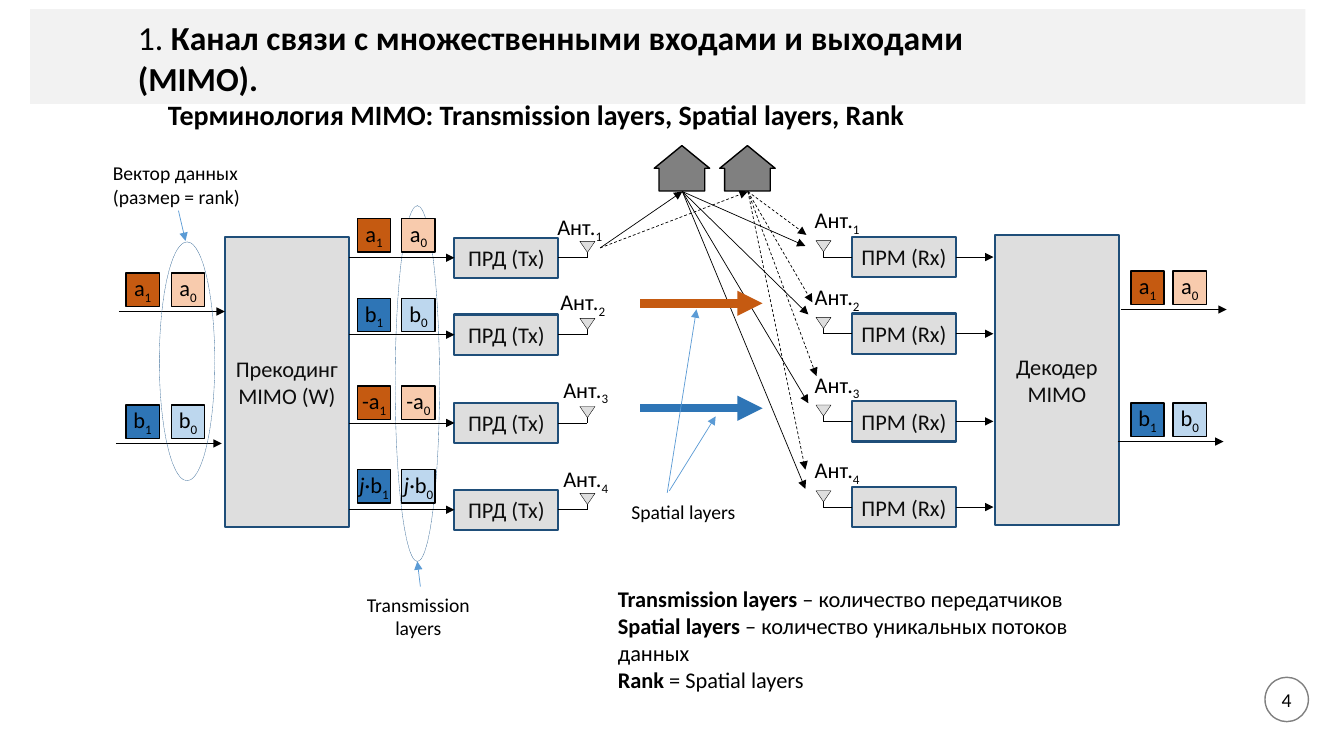
from lxml.etree import SubElement as Sub
from pptx import Presentation
from pptx.dml.color import RGBColor as RGB
from pptx.enum.dml import MSO_LINE as DASH
from pptx.enum.shapes import MSO_CONNECTOR as CON, MSO_SHAPE as GEO
from pptx.enum.text import MSO_ANCHOR as ANC, PP_ALIGN as AL
from pptx.oxml.ns import qn
from pptx.util import Pt

BLACK, INK, WHITE = RGB(0, 0, 0), RGB(13, 13, 13), RGB(255, 255, 255)
BAND, PALE, GREY = RGB(242, 242, 242), RGB(222, 222, 222), RGB(128, 128, 128)
NAVY, RING, SKY = RGB(31, 78, 121), RGB(67, 115, 158), RGB(91, 155, 213)
RUST, PEACH = RGB(197, 90, 17), RGB(248, 203, 173)
BLUE, ICE = RGB(46, 117, 182), RGB(189, 215, 238)
WARM, COOL = (RUST, PEACH), (BLUE, ICE)
CHIP, BOX = 23.8, (74.2, 28.8)


def write(frame, paras, size=16, ink=BLACK, align=AL.LEFT, side=7.2, wrap=True):
    """Fill a frame with paragraphs of (text, style) runs; styles are b, i and s."""
    frame.word_wrap = wrap
    frame.margin_left = frame.margin_right = Pt(side)
    for k, runs in enumerate(paras):
        para = frame.add_paragraph() if k else frame.paragraphs[0]
        para.alignment = align
        for text, style in runs:
            run = para.add_run()
            run.text = text
            font = run.font
            font.name, font.size, font.color.rgb = "Calibri", Pt(size), ink
            font.bold, font.italic = "b" in style, "i" in style
            if "s" in style:
                run._r.get_or_add_rPr().set("baseline", "-25000")


def label(slide, box, paras, **look):
    """Add a text box."""
    area = slide.shapes.add_textbox(*map(Pt, box))
    write(area.text_frame, paras, **look)
    return area


def shape(slide, kind, box, fill=None, line=None, width=1, dash=None):
    """Add a flat preset shape."""
    part = slide.shapes.add_shape(kind, *map(Pt, box))
    part.shadow.inherit = False
    if fill is None:
        part.fill.background()
    else:
        part.fill.solid()
        part.fill.fore_color.rgb = fill
    if line is None:
        part.line.fill.background()
    else:
        part.line.color.rgb, part.line.width = line, Pt(width)
        part.line.dash_style = dash
    return part


def block(slide, box, text, side=7.2):
    """Add a grey block with centred text."""
    part = shape(slide, GEO.RECTANGLE, box, PALE, NAVY, 1.5)
    part.text_frame.vertical_anchor = ANC.MIDDLE
    write(part.text_frame, [[(text, "")]], ink=INK, align=AL.CENTER, side=side)
    return part


def link(slide, start, end, color=BLACK, width=0.5, dash=None, tip=True):
    """Add a straight line, with an arrowhead at its end if asked."""
    wire = slide.shapes.add_connector(CON.STRAIGHT, *map(Pt, (*start, *end)))
    wire.line.color.rgb, wire.line.width = color, Pt(width)
    wire.line.dash_style = dash
    if tip:
        Sub(wire.line._get_or_add_ln(), qn("a:tailEnd"), type="triangle")
    Sub(wire._element.spPr, qn("a:effectLst"))
    return wire


def chips(slide, x, y, gap, tones, first, last):
    """Add two symbol chips, with subscripts 1 and 0."""
    for k, (tone, runs) in enumerate(zip(tones, (first, last))):
        chip = shape(slide, GEO.RECTANGLE, (x + k * gap, y, CHIP, CHIP), tone, BLACK)
        chip.text_frame.vertical_anchor = ANC.MIDDLE
        write(chip.text_frame, [runs + [(str(1 - k), "s")]], align=AL.CENTER, side=0)


def streams(slide, x, y, shift, gap):
    """Add the two data streams a and b, each with its arrow."""
    for name, tones, top, dx in (("a", WARM, 53.3, 0), ("b", COOL, 147.6, -2.2)):
        link(slide, (x + dx, y + top), (x + dx + 75.6, y + top))
        chips(slide, x + shift, y + top - 27.4, gap, tones, [(name, "")], [(name, "")])


def mast(slide, part, site, x, y, spot, num):
    """Add an antenna joined to a side of a block, with its numbered label."""
    edge = (part.left + (part.width if site == 3 else 0)) / Pt(1)
    wire = link(slide, (edge, y), (x, y), tip=False)
    wire.begin_connect(part, site)
    link(slide, (x, y - 4.5), (x, y), tip=False)
    cone = shape(slide, GEO.ISOSCELES_TRIANGLE, (x - 5.4, y - 11.7, 10.8, 7.9), PALE, BLACK, 0.25)
    cone.rotation = 180
    label(slide, (*spot, 47.5, 26.6), [[("Ант.", ""), (str(num), "s")]], wrap=False)


def head(slide, box):
    """Draw the title band with the title and subtitle."""
    x, y, w, h = box
    shape(slide, GEO.RECTANGLE, box, BAND)
    area = label(slide, (x + 69.8, y + 2.2, 661.7, 65.5),
                 [[("1. ", ""), ("Канал связи с множественными входами и выходами (MIMO).", "b")],
                  [("Терминология MIMO: Transmission layers, Spatial layers, Rank", "b")]], size=24)
    para = area.text_frame.paragraphs[1]
    para.runs[0].font.size = Pt(20)
    para._p.get_or_add_pPr().set("marL", str(Pt(21.5)))


def sender(slide, box):
    """Draw the precoder, its data vector and the transmitters."""
    x, y, w, h = box
    shape(slide, GEO.OVAL, (x + 121.7, y - 22.3, 31.7, 254.2), None, RING, 0.25, DASH.SQUARE_DOT)
    block(slide, box, "Прекодинг MIMO (W)")
    streams(slide, x - 75.6, y, 5, 32.4)
    shape(slide, GEO.OVAL, (x - 46.8, y + 3.6, 39.6, 170.6), None, RING, 0.25, DASH.SQUARE_DOT)
    a, b, neg = [("a", "")], [("b", "")], [("-a", "")]
    rows = ((0.5, 230.4, -20.2, -13, WARM, a, a),
            (55.5, 232.6, 33.1, 43.9, COOL, b, b),
            (118.5, 234.7, 95.8, 106.6, WARM, neg, neg),
            (180.5, 234.7, 159.8, 166.3, COOL, [("j", "i"), ("·b", "")], [("j·", "i"), ("b", "")]))
    for num, (top, tx, ty, cy, tones, first, last) in enumerate(rows, 1):
        part = block(slide, (x + 164, y + top, *BOX), "ПРД (Tx)")
        mid = y + top + BOX[1] / 2
        link(slide, (x + w, mid), (x + 164, mid)).end_connect(part, 1)
        mast(slide, part, 3, x + 259, mid, (x + tx, y + ty), num)
        chips(slide, x + 94.7, y + cy, 31.7, tones, first, last)
    link(slide, (x - 33.1, y - 18.7), (x - 28.1, y + 2.9), SKY)
    link(slide, (x + 139.7, y + 249.8), (x + 137.5, y + 231.8), SKY)
    label(slide, (x - 87.1, y - 57.6, 118, 41), [[("Вектор данных (размер = rank)", "")]], size=14)
    label(slide, (x + 79.2, y + 250.6, 118, 41), [[("Transmission layers", "")]],
          size=14, align=AL.CENTER)


def receiver(slide, box):
    """Draw the decoder, its output streams and the receivers."""
    x, y, w, h = box
    block(slide, box, "Декодер MIMO")
    streams(slide, x + 90, y, 7.2, 30.2)
    for num, top in enumerate((1.4, 56.2, 118.8, 180), 1):
        part = block(slide, (x - 102, y + top, *BOX), "ПРM (Rx)", side=2.9)
        mid = y + top + BOX[1] / 2
        link(slide, (x - 102 + BOX[0], mid), (x - 1, mid)).begin_connect(part, 3)
        mast(slide, part, 1, x - 122.4, mid, (x - 135.7, y + top - 25.2), num)


def channel(slide, box):
    """Draw the reflectors, the rays and the spatial layers."""
    x, y, w, h = box
    rays = ((42.9, 59.4, None, ((147.3, 75.7), (149.4, 124.6), (149.4, 188), (147.3, 249.2))),
            (89.7, 106.2, DASH.DASH, ((148, 67.8), (152.3, 116), (155.2, 168.6), (147.3, 235.5))))
    for left, foot, dash, ends in rays:
        house = shape(slide, GEO.RIGHT_ARROW, (x + left, y + 0.4, 32.4, 39.6), GREY, BLACK)
        house.rotation = 270
        house.adjustments[0], house.adjustments[1] = 0.825, 0.5
        base = (x + foot, y + 36.8)
        link(slide, (x + 0.7, y + 77.1), base, dash=dash)
        for dx, dy in ends:
            link(slide, base, (x + dx, y + dy), dash=dash)
    for dy, color in ((116.7, RUST), (191.6, BLUE)):
        link(slide, (x + 29.5, y + dy), (x + 116.7, y + dy), color, 6)
    link(slide, (x + 48.6, y + 252.1), (x + 69.5, y + 121), SKY)
    link(slide, (x + 50.1, y + 250.6), (x + 83.2, y + 197.4), SKY)
    label(slide, (x + 1.1, y + 253.5, 118, 24.5), [[("Spatial layers", "")]],
          size=14, align=AL.CENTER)


def terms(slide, box):
    """Write the definitions."""
    label(slide, box, [[("Transmission layers", "b"), (" – количество передатчиков", "")],
                       [("Spatial layers ", "b"), ("– количество уникальных потоков данных", "")],
                       [("Rank", "b"), (" = Spatial layers", "")]])


def badge(slide, box):
    """Draw the page number in a circle."""
    disc = shape(slide, GEO.OVAL, box, WHITE, GREY)
    disc.text_frame.vertical_anchor = ANC.MIDDLE
    write(disc.text_frame, [[("4", "")]], size=14, align=AL.CENTER)


def main():
    """Build the slide and save it."""
    deck = Presentation()
    deck.slide_width, deck.slide_height = Pt(960), Pt(540)
    slide = deck.slides.add_slide(deck.slide_layouts[6])
    head(slide, (21.6, 6.5, 910.8, 67.7))
    sender(slide, (160.6, 169.2, 88.6, 207.4))
    receiver(slide, (710.6, 167.8, 88.6, 207.4))
    channel(slide, (428, 100, 175, 278))
    terms(slide, (434.2, 414.7, 342, 65.5))
    badge(slide, (903.6, 483.8, 31, 31.7))
    deck.save("out.pptx")


if __name__ == "__main__":
    main()
